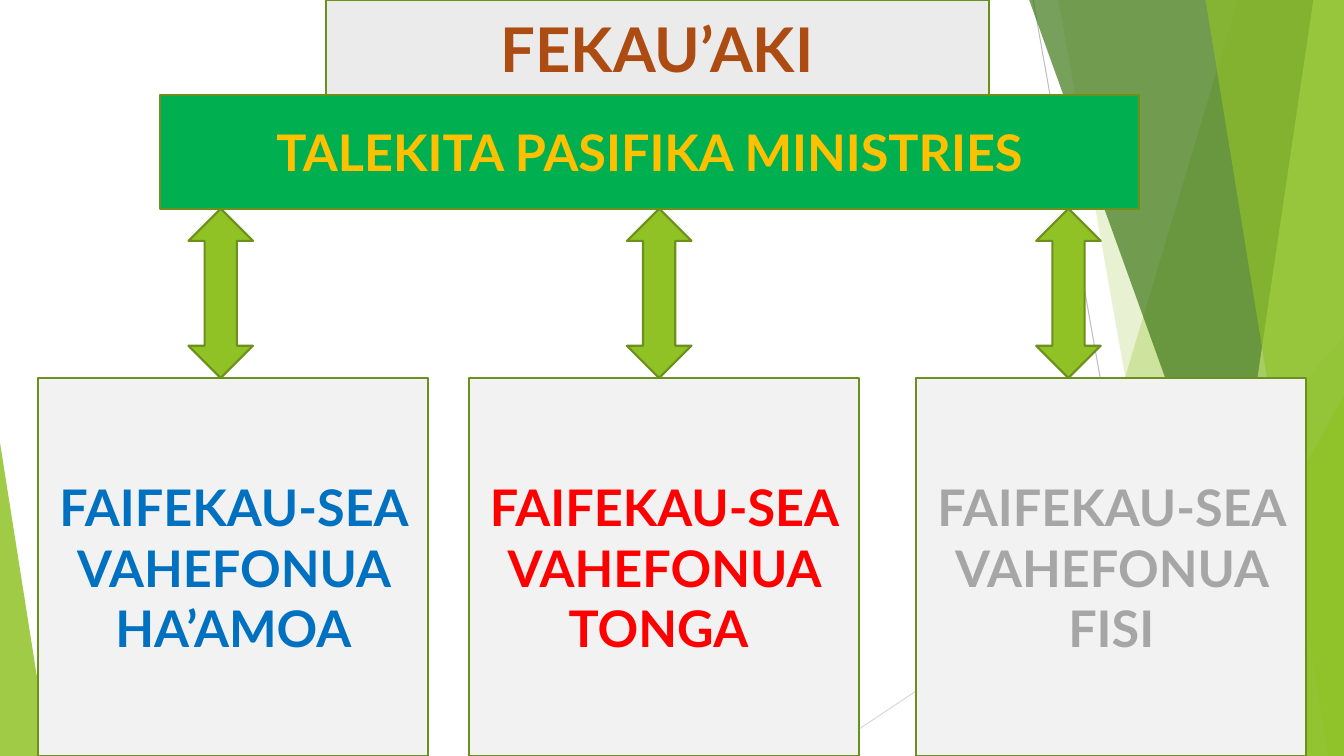
from lxml.etree import SubElement
from pptx import Presentation
from pptx.dml.color import RGBColor
from pptx.enum.shapes import MSO_CONNECTOR, MSO_SHAPE
from pptx.enum.text import MSO_ANCHOR, MSO_AUTO_SIZE, PP_ALIGN
from pptx.oxml.ns import qn
from pptx.util import Inches, Pt

COLS, ROWS = 40, 20
GREEN, EDGE = "90C226", "6B901C"


def color(hex_string):
    return RGBColor.from_string(hex_string)


class Deck:
    """Holds the style and the current slide; lengths are grid columns and rows."""

    font = {"name": "Lato", "bold": True}
    frame = {"word_wrap": True, "auto_size": MSO_AUTO_SIZE.NONE,
             "vertical_anchor": MSO_ANCHOR.MIDDLE}

    def __init__(self):
        self.prs = Presentation()
        self.prs.slide_width, self.prs.slide_height = Inches(13.333), Inches(7.5)
        self.s = self.prs.slides.add_slide(self.prs.slide_layouts[5])

    def x(self, cols):
        return int(self.prs.slide_width * cols / COLS)

    def y(self, rows):
        return int(self.prs.slide_height * rows / ROWS)

    def box(self, left, top, width, height):
        return self.x(left), self.y(top), self.x(width), self.y(height)

    def paint(self, sp, fill, opacity=100, outlined=False):
        sp.fill.solid()
        sp.fill.fore_color.rgb = color(fill)
        if opacity < 100:
            clr = sp._element.spPr.find(qn("a:solidFill"))[0]
            SubElement(clr, qn("a:alpha")).set("val", str(opacity * 1000))
        if outlined:
            sp.line.color.rgb = color(EDGE)
            sp.line.width = Pt(1.5)
        else:
            sp.line.fill.background()

    def label(self, sp, text, size, ink):
        tf = sp.text_frame
        for key, value in self.frame.items():
            setattr(tf, key, value)
        p = tf.paragraphs[0]
        p.alignment = PP_ALIGN.CENTER
        r = p.add_run()
        r.text = text
        for key, value in {**self.font, "size": Pt(size)}.items():
            setattr(r.font, key, value)
        r.font.color.rgb = color(ink)

    def title(self, text, area, fill, size, ink):
        sp = self.s.shapes.title
        sp.left, sp.top, sp.width, sp.height = self.box(*area)
        self.paint(sp, fill, outlined=True)
        self.label(sp, text, size, ink)

    def shape(self, kind, area, fill, opacity=100, outlined=False):
        sp = self.s.shapes.add_shape(kind, *self.box(*area))
        sp.shadow.inherit = False
        self.paint(sp, fill, opacity, outlined)
        return sp

    def panel(self, text, area, fill, ink, size=36):
        sp = self.shape(MSO_SHAPE.RECTANGLE, area, fill, outlined=True)
        self.label(sp, text, size, ink)

    def triangle(self, area, fill, opacity, apex):
        """Triangle whose apex is a share of its width."""
        sp = self.shape(MSO_SHAPE.ISOSCELES_TRIANGLE, area, fill, opacity)
        sp.adjustments[0] = apex

    def facet(self, top_col, bottom_col, fill, opacity):
        """Full-height strip from a slanted left edge to the slide's right edge."""
        fb = self.s.shapes.build_freeform(self.x(top_col), 0)
        corners = [(COLS, 0), (COLS, ROWS), (bottom_col, ROWS)]
        fb.add_line_segments([(self.x(c), self.y(r)) for c, r in corners])
        sp = fb.convert_to_shape()
        sp.shadow.inherit = False
        self.paint(sp, fill, opacity)

    def line(self, start, end, ink):
        ends = [f(v) for point in (start, end) for f, v in zip((self.x, self.y), point)]
        cn = self.s.shapes.add_connector(MSO_CONNECTOR.STRAIGHT, *ends)
        cn.line.color.rgb = color(ink)
        cn.line.width = Pt(0.75)
        SubElement(cn._element.spPr, qn("a:effectLst"))


def draw_backdrop(deck):
    deck.line((30.75, 0), (34.74, ROWS), "BFBFBF")
    deck.line((COLS, 10.75), (24.36, ROWS), "D9D9D9")
    deck.facet(36.84, 30.12, GREEN, 30)
    deck.facet(31.5, 35.49, GREEN, 20)
    deck.triangle((29.31, 8.88, 10.69, 11.12), "54A021", 72, apex=1)
    deck.facet(30.63, 38.73, "3F7819", 70)
    deck.facet(39.09, 35.76, "C0E474", 70)
    deck.facet(35.88, 39.54, GREEN, 65)
    deck.triangle((34.02, 10.48, 5.98, 9.52), GREEN, 80, apex=1)
    deck.triangle((0, 11.71, 1.47, 8.29), GREEN, 85, apex=0)


def main():
    deck = Deck()
    draw_backdrop(deck)

    banner_top, banner_bottom, region_top = 2.51, 5.52, 10
    deck.title("FEKAU’AKI", (9.69, 0, 19.74, banner_top), "EBEBEB", 44, "AD4C12")
    deck.panel("TALEKITA PASIFIKA MINISTRIES",
               (4.77, banner_top, 29.13, banner_bottom - banner_top), "00B050", "FFC000")

    regions = [("HA’AMOA", "0070C0", 1.14, 5.61),
               ("TONGA ", "FF0000", 13.95, 18.66),
               ("FISI", "A6A6A6", 27.27, 30.84)]
    for name, ink, left, arrow_left in regions:
        deck.panel(f"FAIFEKAU-SEA VAHEFONUA {name}",
                   (left, region_top, 11.61, ROWS - region_top), "F2F2F2", ink)
        deck.shape(MSO_SHAPE.UP_DOWN_ARROW,
                   (arrow_left, banner_bottom, 1.92, region_top - banner_bottom),
                   GREEN, outlined=True)

    deck.prs.save("out.pptx")


if __name__ == "__main__":
    main()
